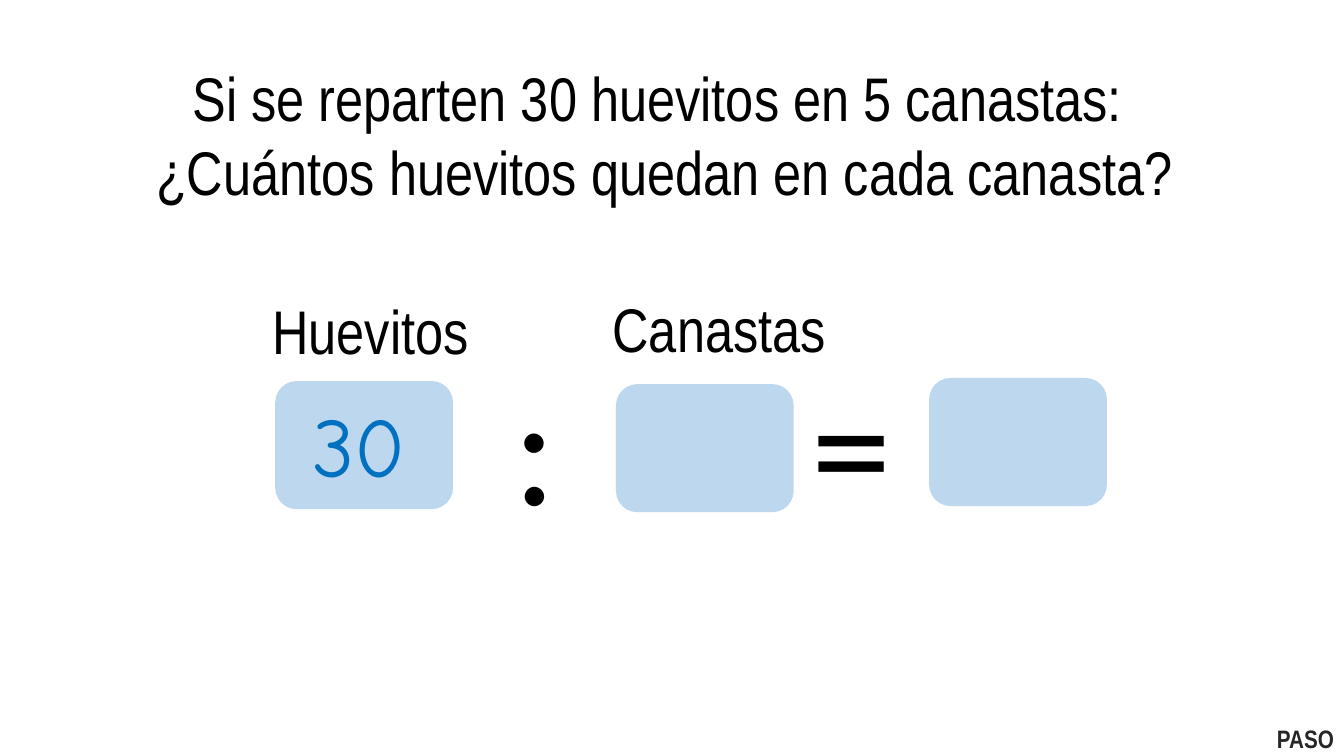
import pptx
import pptx.util
import pptx.dml.color
import pptx.enum.shapes
import pptx.enum.text

Pt = pptx.util.Pt
Align = pptx.enum.text.PP_ALIGN
Anchor = pptx.enum.text.MSO_ANCHOR
BLACK = pptx.dml.color.RGBColor(0x00, 0x00, 0x00)
GREY = pptx.dml.color.RGBColor(0x26, 0x26, 0x26)
BLUE = pptx.dml.color.RGBColor(0x00, 0x70, 0xC0)
PALE = pptx.dml.color.RGBColor(0xBD, 0xD7, 0xEE)
NARROW = "Arial Narrow"


def place(shape, left, top, width, height):
    shape.left, shape.top = Pt(left), Pt(top)
    shape.width, shape.height = Pt(width), Pt(height)


def write(shape, text, font=NARROW, size=44, color=BLACK, bold=False,
          align=Align.LEFT, anchor=Anchor.TOP, wrap=True):
    frame = shape.text_frame
    frame.auto_size = pptx.enum.text.MSO_AUTO_SIZE.NONE
    frame.word_wrap = wrap
    frame.vertical_anchor = anchor
    line = frame.paragraphs[0]
    line.text = text
    line.alignment = align
    for run in line.runs:
        run.font.name = font
        run.font.size = Pt(size)
        run.font.bold = bold
        run.font.color.rgb = color


def add_text(slide, text, left, top, width, height, **style):
    box = slide.shapes.add_textbox(
        Pt(left), Pt(top), Pt(width), Pt(height))
    write(box, text, **style)


def add_card(slide, left, top):
    kind = pptx.enum.shapes.MSO_SHAPE.ROUNDED_RECTANGLE
    card = slide.shapes.add_shape(
        kind, Pt(left), Pt(top), Pt(127), Pt(91.5))
    card.shadow.inherit = False
    card.fill.solid()
    card.fill.fore_color.rgb = PALE
    card.line.fill.background()


def main():
    deck = pptx.Presentation()
    deck.slide_width, deck.slide_height = Pt(960), Pt(540)
    slide = deck.slides.add_slide(deck.slide_layouts[5])

    title = slide.shapes.title
    place(title, 95, 38.5, 760, 114)
    write(title, "Si se reparten 30 huevitos en 5 canastas: \v"
          "¿Cuántos huevitos quedan en cada canasta?",
          align=Align.CENTER, anchor=Anchor.MIDDLE)

    for label, left, top in (("Huevitos", 187.5, 205.2),
                             ("Canastas", 430.5, 203.8)):
        add_text(slide, label, left, top, 252, 60.5, anchor=Anchor.MIDDLE)

    for left, top in ((196.6, 272.2), (440, 274.4), (663.7, 270)):
        add_card(slide, left, top)
    add_text(slide, "30", 216, 277.8, 88.6, 80, font="Comic Neue",
             size=60, color=BLUE, wrap=False)

    for sign, center in ((":", 382.5), ("=", 608)):
        add_text(slide, sign, center - 40, 242.6, 80, 147,
                 font="Calibri", size=115, align=Align.CENTER)

    add_text(slide, "PASO", 905, 512.8, 54, 27,
             size=18, color=GREY, bold=True, wrap=False)
    deck.save("out.pptx")


if __name__ == "__main__":
    main()
